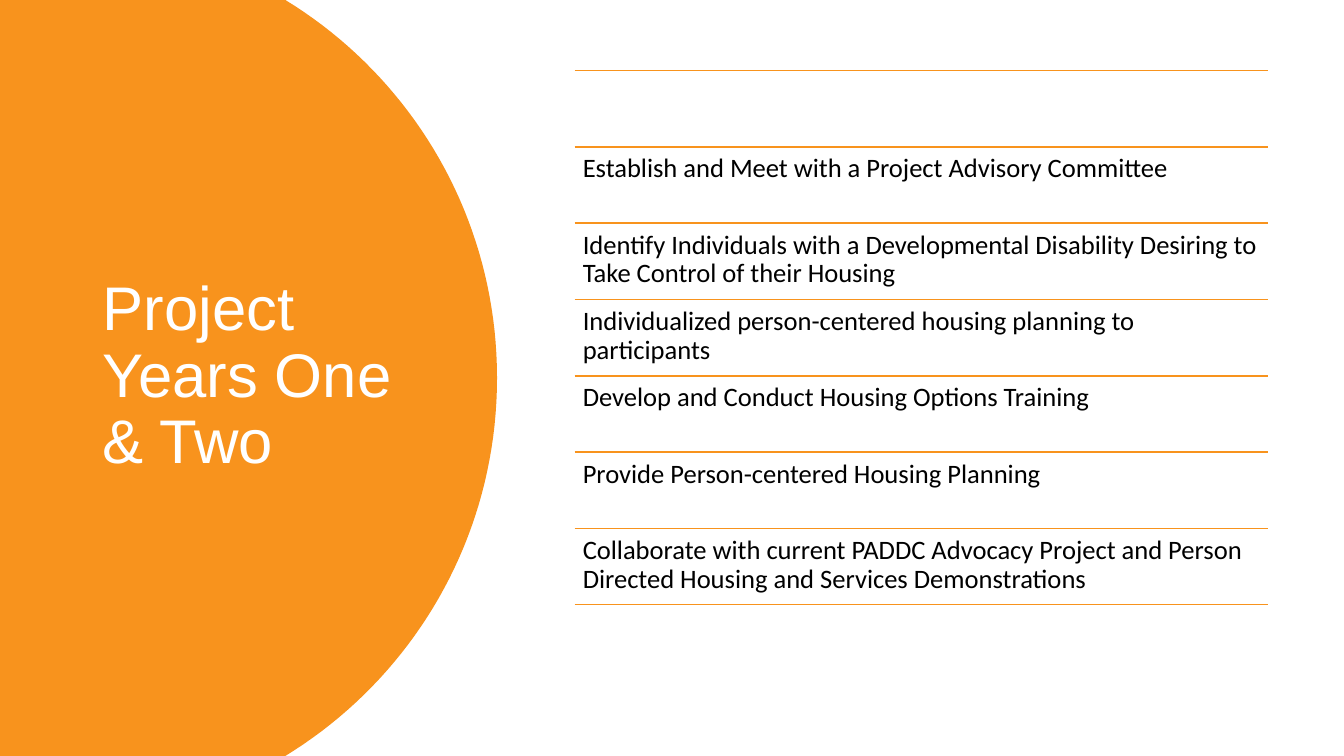
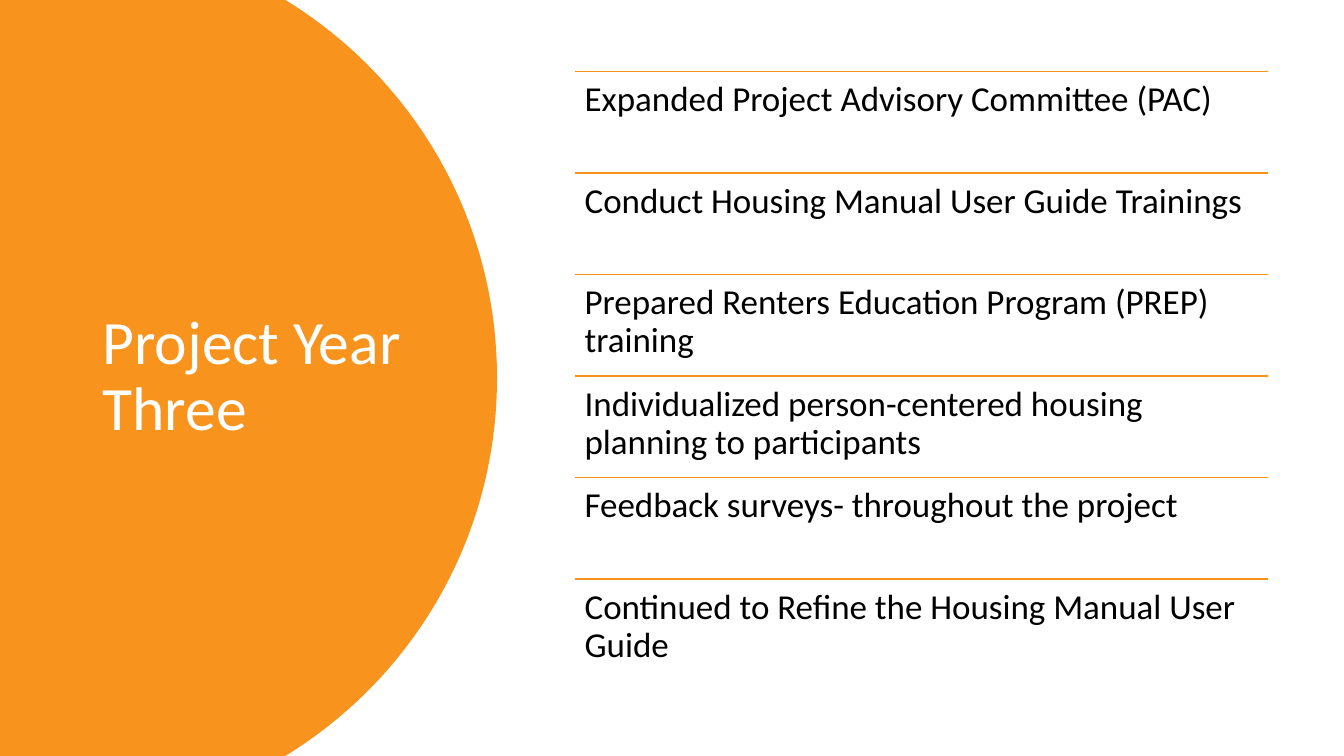
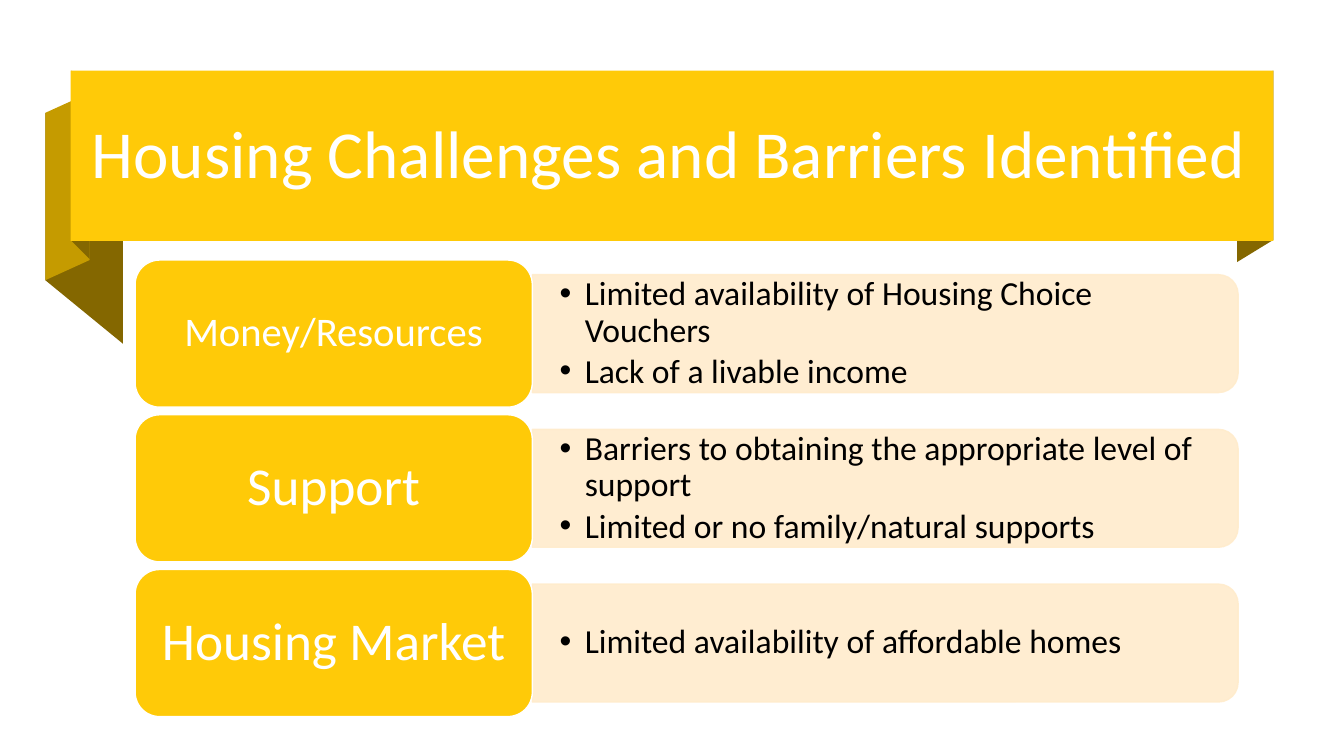
from dataclasses import dataclass

from lxml.etree import SubElement
from pptx import Presentation
from pptx.dml.color import RGBColor
from pptx.enum.shapes import MSO_CONNECTOR as CONNECTOR, MSO_SHAPE as SHAPE
from pptx.enum.text import MSO_ANCHOR as ANCHOR, PP_ALIGN as ALIGN
from pptx.oxml.ns import qn
from pptx.util import Inches, Pt

# Shared style
ORANGE = RGBColor(0xF8, 0x93, 0x1D)
GOLD = RGBColor(0xFF, 0xCA, 0x08)
MID_GOLD = RGBColor(0xC5, 0x9B, 0x00)
DARK_GOLD = RGBColor(0x84, 0x67, 0x00)
CREAM = RGBColor(0xFF, 0xEC, 0xCC)
WHITE = RGBColor(0xFF, 0xFF, 0xFF)
BLACK = RGBColor(0x00, 0x00, 0x00)
BODY_FONT = "Calibri"
LINE_SPACING = 0.9
SLIDE_W, SLIDE_H = 13.33, 7.5

# Ruled list geometry
RULE_LEFT, RULE_RIGHT = 5.7, 12.58

# Barrier rows geometry
ROW_TOP, ROW_PITCH = 2.58, 1.535
LABEL_LEFT, LABEL_W, LABEL_H = 1.34, 3.94, 1.46
PANEL_W, PANEL_H = 7, 1.17

Point = tuple[float, float]


@dataclass
class RuledList:
    title: str
    title_font: str
    size: int
    inset: float
    top: float
    bottom: float
    row_count: int
    rule_count: int
    items: tuple[str, ...]


@dataclass
class Barrier:
    label: str
    size: int
    insets: Point
    points: tuple[str, ...]


@dataclass
class RibbonFold:
    color: RGBColor
    points: tuple[Point, ...]


RULED_LISTS = (
    RuledList("Project Years One & Two", "Arial", 19, 0.08, 0.7, 6, 7, 8, (
        "Establish and Meet with a Project Advisory Committee",
        "Identify Individuals with a Developmental Disability Desiring to "
        "Take Control of their Housing",
        "Individualized person-centered housing planning to participants",
        "Develop and Conduct Housing Options Training",
        "Provide Person-centered Housing Planning",
        "Collaborate with current PADDC Advocacy Project and Person "
        "Directed Housing and Services Demonstrations",
    )),
    RuledList("Project Year Three", BODY_FONT, 25, 0.1, 0.71, 6.75, 6, 6, (
        "Expanded Project Advisory Committee (PAC)",
        "Conduct Housing Manual User Guide Trainings",
        "Prepared Renters Education Program (PREP) training",
        "Individualized person-centered housing planning to participants",
        "Feedback surveys- throughout the project",
        "Continued to Refine the Housing Manual User Guide",
    )),
)

BARRIERS = (
    Barrier("Money/Resources", 29, (0.12, 0.06), (
        "Limited availability of Housing Choice Vouchers",
        "Lack of a livable income",
    )),
    Barrier("Support", 38, (0.16, 0.08), (
        "Barriers to obtaining the appropriate level of support",
        "Limited or no family/natural supports",
    )),
    Barrier("Housing Market", 38, (0.16, 0.08), (
        "Limited availability of affordable homes",
    )),
)

RIBBON_FOLDS = (
    RibbonFold(DARK_GOLD, ((12.63, 2.38), (12.27, 2.6), (12.27, 0.91), (12.63, 0.7))),
    RibbonFold(DARK_GOLD, ((1.22, 3.41), (0.45, 2.78), (0.45, 1.12), (1.22, 1.75))),
    RibbonFold(MID_GOLD, ((0.89, 2.58), (0.45, 2.78), (0.45, 1.12), (0.89, 0.92))),
    RibbonFold(DARK_GOLD, ((0.89, 2.57), (0.71, 2.39), (0.71, 0.7), (0.89, 0.89))),
)


# Drawing helpers
def paint(shape, fill: RGBColor, line: RGBColor | None = None) -> None:
    shape.shadow.inherit = False
    shape.fill.solid()
    shape.fill.fore_color.rgb = fill
    if line is None:
        shape.line.fill.background()
    else:
        shape.line.color.rgb = line
        shape.line.width = Pt(1)


def set_opacity(shape, percent: int) -> None:
    for color in shape.element.spPr.iter(qn("a:srgbClr")):
        SubElement(color, qn("a:alpha"), val=str(percent * 1000))


def add_block(s, kind: SHAPE, left: float, top: float, width: float, height: float):
    return s.shapes.add_shape(kind, Inches(left), Inches(top),
                              Inches(width), Inches(height))


def add_polygon(s, points: tuple[Point, ...], color: RGBColor) -> None:
    corners = [(Inches(x), Inches(y)) for x, y in points]
    builder = s.shapes.build_freeform(*corners[0])
    builder.add_line_segments(corners[1:], close=True)
    paint(builder.convert_to_shape(), color)


def add_rule(s, y: float) -> None:
    rule = s.shapes.add_connector(CONNECTOR.STRAIGHT, Inches(RULE_LEFT), Inches(y),
                                  Inches(RULE_RIGHT), Inches(y))
    rule.line.color.rgb = ORANGE
    rule.line.width = Pt(1)
    SubElement(rule.element.spPr, qn("a:effectLst"))


def write(shape, lines: tuple[str, ...], size: int, color: RGBColor,
          font: str = BODY_FONT, insets: Point = (0.1, 0.05),
          anchor: ANCHOR = ANCHOR.MIDDLE, align: ALIGN = ALIGN.LEFT,
          bullets: bool = False) -> None:
    tf = shape.text_frame
    side, end = (Inches(inset) for inset in insets)
    frame_format = {"word_wrap": True, "vertical_anchor": anchor,
                    "margin_left": side, "margin_right": side,
                    "margin_top": end, "margin_bottom": end}
    for name, value in frame_format.items():
        setattr(tf, name, value)
    for i, line in enumerate(lines):
        p = tf.add_paragraph() if i else tf.paragraphs[0]
        p.alignment, p.line_spacing = align, LINE_SPACING
        r = p.add_run()
        r.text = line
        for name, value in {"name": font, "size": Pt(size)}.items():
            setattr(r.font, name, value)
        r.font.color.rgb = color
        if bullets:
            p.space_after = Pt(size * 0.15)
            pPr = p._p.get_or_add_pPr()
            pPr.set("marL", str(Inches(0.25)))
            pPr.set("indent", str(-Inches(0.25)))
            SubElement(pPr, qn("a:buFont"), typeface="Arial")
            SubElement(pPr, qn("a:buChar"), char="•")


def add_text(s, left: float, top: float, width: float, height: float,
             lines: tuple[str, ...], size: int, color: RGBColor, **options) -> None:
    box = s.shapes.add_textbox(Inches(left), Inches(top),
                               Inches(width), Inches(height))
    write(box, lines, size, color, **options)


def bezier(a: Point, b: Point, c: Point, d: Point, steps: int = 40) -> list[Point]:
    curve = []
    for i in range(steps + 1):
        t = i / steps
        u = 1 - t
        weights = (u ** 3, 3 * u * u * t, 3 * u * t * t, t ** 3)
        x, y = (sum(w * q[axis] for w, q in zip(weights, (a, b, c, d)))
                for axis in (0, 1))
        curve.append((x, y))
    return curve


# Slide kinds
def add_ruled_list_slide(prs, ruled: RuledList) -> None:
    s = prs.slides.add_slide(prs.slide_layouts[6])

    # Round side panel and title
    upper = bezier((2.83, 0), (4.09, 0.77), (4.93, 2.16), (4.93, 3.75))
    lower = [(x, SLIDE_H - y) for x, y in reversed(upper[:-1])]
    add_polygon(s, ((0, 0), *upper, *lower, (0, SLIDE_H)), ORANGE)
    add_text(s, 0.92, 0.7, 3.23, 6.09, (ruled.title,), 44, WHITE,
             font=ruled.title_font)

    # Rules, with the items filling the last rows
    pitch = (ruled.bottom - ruled.top) / ruled.row_count
    for i in range(ruled.rule_count):
        add_rule(s, ruled.top + i * pitch)
    first_row = ruled.row_count - len(ruled.items)
    for row, item in enumerate(ruled.items, first_row):
        add_text(s, RULE_LEFT, ruled.top + row * pitch, RULE_RIGHT - RULE_LEFT,
                 pitch, (item,), ruled.size, BLACK,
                 insets=(ruled.inset, ruled.inset), anchor=ANCHOR.TOP)


def add_barrier(s, barrier: Barrier, top: float) -> None:
    panel_left = LABEL_LEFT + LABEL_W
    middle = top + LABEL_H / 2

    # Panel: an upright shape turned a quarter to round its right side
    panel = add_block(s, SHAPE.ROUND_2_SAME_RECTANGLE,
                      panel_left + (PANEL_W - PANEL_H) / 2, middle - PANEL_W / 2,
                      PANEL_H, PANEL_W)
    panel.rotation = 90
    paint(panel, CREAM, CREAM)
    set_opacity(panel, 90)
    add_text(s, panel_left, middle - 0.53, 6.94, 1.06, barrier.points, 24, BLACK,
             insets=(0.27, 0.14), bullets=True)

    # Label
    label = add_block(s, SHAPE.ROUNDED_RECTANGLE, LABEL_LEFT, top, LABEL_W, LABEL_H)
    paint(label, GOLD, WHITE)
    write(label, (barrier.label,), barrier.size, WHITE, insets=barrier.insets,
          align=ALIGN.CENTER)


def add_barriers_slide(prs) -> None:
    s = prs.slides.add_slide(prs.slide_layouts[6])

    # Ribbon title
    for fold in RIBBON_FOLDS:
        add_polygon(s, fold.points, fold.color)
    paint(add_block(s, SHAPE.RECTANGLE, 0.7, 0.7, 11.93, 1.69), GOLD)
    add_text(s, 0.81, 0.83, 11.71, 1.45,
             ("Housing Challenges and Barriers Identified",), 48, WHITE)

    for i, barrier in enumerate(BARRIERS):
        add_barrier(s, barrier, ROW_TOP + i * ROW_PITCH)


def main() -> None:
    prs = Presentation()
    prs.slide_width, prs.slide_height = Inches(SLIDE_W), Inches(SLIDE_H)
    for ruled in RULED_LISTS:
        add_ruled_list_slide(prs, ruled)
    add_barriers_slide(prs)
    prs.save("out.pptx")


if __name__ == "__main__":
    main()
